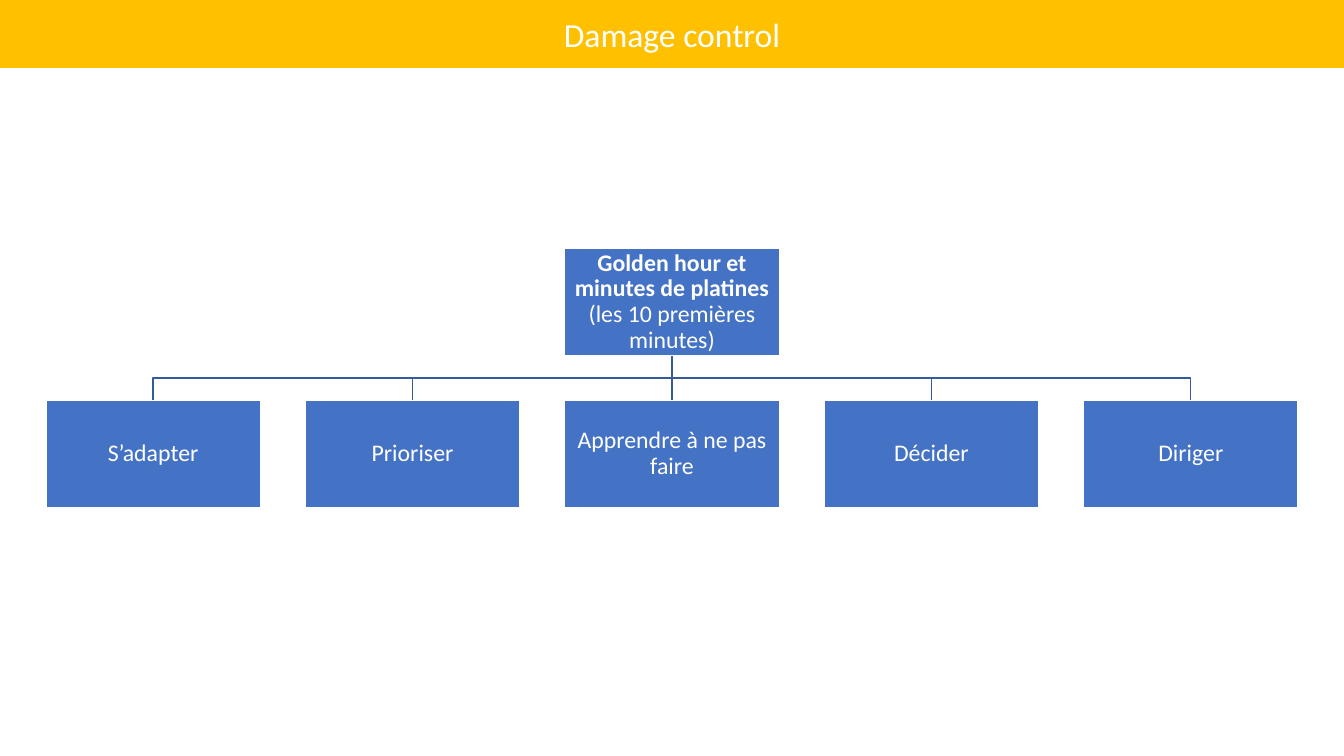
from pptx import Presentation
from pptx.dml.color import RGBColor
from pptx.enum.shapes import MSO_CONNECTOR as Link, MSO_SHAPE as Kind
from pptx.enum.text import MSO_ANCHOR as Anchor, PP_ALIGN as Align
from pptx.oxml.ns import qn
from pptx.util import Pt

GOLD = RGBColor(0xFF, 0xC0, 0x00)
BLUE = RGBColor(0x44, 0x72, 0xC4)
NAVY = RGBColor(0x36, 0x5B, 0x9D)
WHITE = RGBColor(0xFF, 0xFF, 0xFF)

WIDTH, HEIGHT = 960, 540
MID = WIDTH / 2
BOX_W, BOX_H = 153.2, 76.6
STEP = 185.3
ROOT_TOP, LEAF_TOP = 177.4, 286.1
ROOT_END = ROOT_TOP + BOX_H
BEND = (ROOT_END + LEAF_TOP) / 2

ROOT = [("Golden hour et minutes de platines", True),
        (" (les 10 premières minutes)", False)]
LEAVES = ["S’adapter", "Prioriser", "Apprendre à ne pas faire",
          "Décider", "Diriger"]

FRAME = {"word_wrap": True, "vertical_anchor": Anchor.MIDDLE}
TIGHT = {"margin_" + side: Pt(0.75)
         for side in ("left", "right", "top", "bottom")}


def style(item, values):
    for name, value in values.items():
        setattr(item, name, value)


def stroke(shape, color):
    shape.line.color.rgb = color
    shape.line.width = Pt(1)


def panel(slide, area, colors, runs, size, frame, para):
    shape = slide.shapes.add_shape(Kind.RECTANGLE, *map(Pt, area))
    shape.shadow.inherit = False
    fill, edge = colors
    shape.fill.solid()
    shape.fill.fore_color.rgb = fill
    stroke(shape, edge)
    style(shape.text_frame, frame)
    first = shape.text_frame.paragraphs[0]
    style(first, {"alignment": Align.CENTER, **para})
    for text, bold in runs:
        run = first.add_run()
        run.text = text
        style(run.font, {"name": "Calibri", "size": Pt(size), "bold": bold})
        run.font.color.rgb = WHITE


def box(slide, center, top, runs):
    area = (center - BOX_W / 2, top, BOX_W, BOX_H)
    panel(slide, area, (BLUE, WHITE), runs, 17,
          {**FRAME, **TIGHT}, {"line_spacing": 0.9})


def stem(slide):
    ends = (MID, ROOT_END, MID, LEAF_TOP)
    line = slide.shapes.add_connector(Link.STRAIGHT, *map(Pt, ends))
    stroke(line, NAVY)
    props = line._element.spPr
    props.append(props.makeelement(qn("a:effectLst"), {}))


def branch(slide, center):
    path = slide.shapes.build_freeform(Pt(MID), Pt(ROOT_END))
    turns = [(MID, BEND), (center, BEND), (center, LEAF_TOP)]
    path.add_line_segments([(Pt(x), Pt(y)) for x, y in turns], close=False)
    line = path.convert_to_shape()
    line.shadow.inherit = False
    line.fill.background()
    stroke(line, NAVY)


def main():
    deck = Presentation()
    style(deck, {"slide_width": Pt(WIDTH), "slide_height": Pt(HEIGHT)})
    slide = deck.slides.add_slide(deck.slide_layouts[6])
    panel(slide, (0, 0, WIDTH, 48.2), (GOLD, GOLD),
          [("Damage control", False)], 24, FRAME, {})

    half = len(LEAVES) // 2
    centers = [MID + (i - half) * STEP for i in range(len(LEAVES))]
    for center in centers:
        if center == MID:
            stem(slide)
        else:
            branch(slide, center)
    box(slide, MID, ROOT_TOP, ROOT)
    for center, text in zip(centers, LEAVES):
        box(slide, center, LEAF_TOP, [(text, False)])
    deck.save("out.pptx")


if __name__ == "__main__":
    main()
